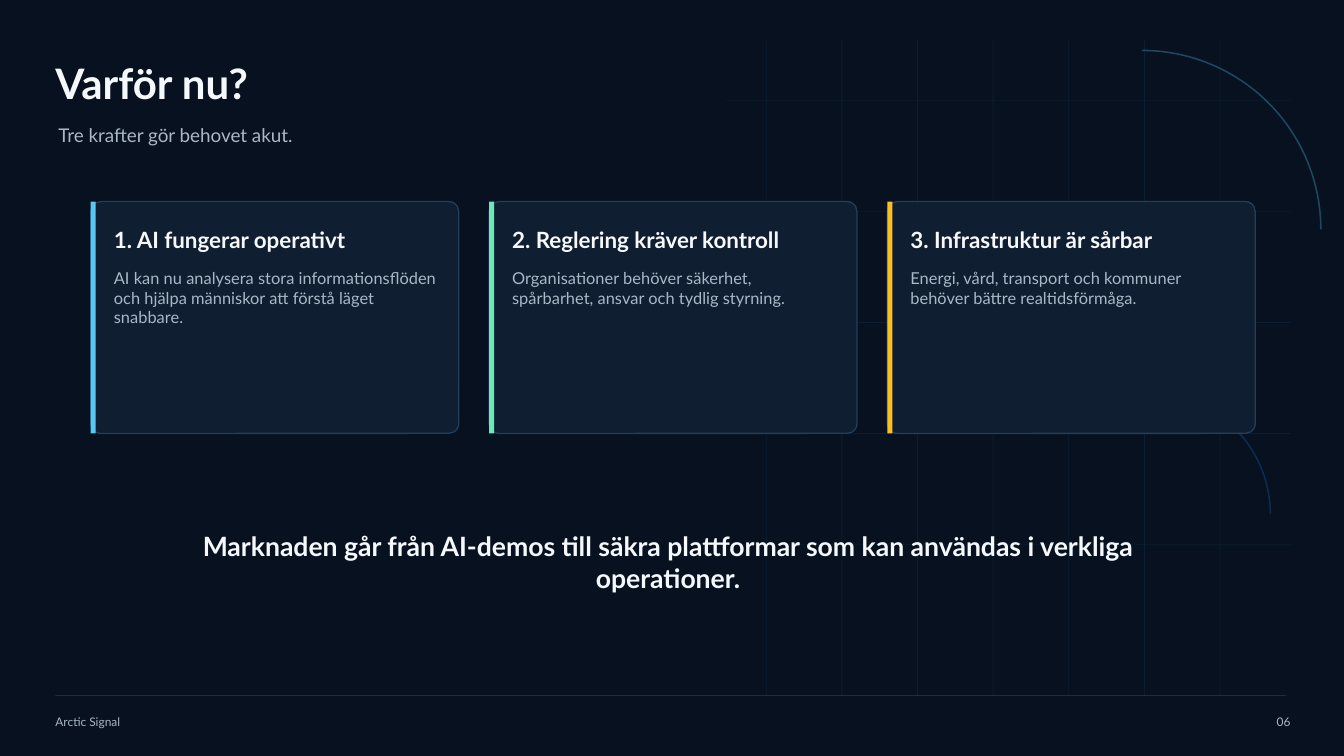
from lxml import etree
from pptx import Presentation
from pptx import util as u
from pptx.dml.color import RGBColor
from pptx.enum import shapes, text
from pptx.oxml.ns import qn

# Grid: one cell is a tenth of an inch, 133.3 columns by 75 rows
CELL = 0.1
COLUMNS, ROWS = 133.3, 75

BACKGROUND, PANEL = "07111F", "111F33"
WHITE, GREY = "F5F8FC", "AAB7C7"
GRID, BORDER = "12304A", "284866"
CYAN, BLUE, GREEN, AMBER = "58C7F3", "2B87FF", "6EE7B7", "FBBF24"

CARDS = [
    ("1. AI fungerar operativt", CYAN,
     "AI kan nu analysera stora informationsflöden och hjälpa människor "
     "att förstå läget snabbare."),
    ("2. Reglering kräver kontroll", GREEN,
     "Organisationer behöver säkerhet, spårbarhet, ansvar och tydlig styrning."),
    ("3. Infrastruktur är sårbar", AMBER,
     "Energi, vård, transport och kommuner behöver bättre realtidsförmåga."),
]


def cells(*counts):
    return [u.Inches(count * CELL) for count in counts]


def color(hex_value):
    return RGBColor.from_string(hex_value)


class SlideBuilder:
    font = "Lato"

    def __init__(self, presentation):
        self.slide = presentation.slides.add_slide(presentation.slide_layouts[6])
        fill = self.slide.background.fill
        fill.solid()
        fill.fore_color.rgb = color(BACKGROUND)

    def paint(self, fill, hex_value, opacity=100):
        fill.solid()
        fill.fore_color.rgb = color(hex_value)
        if opacity < 100:
            srgb = fill._xPr.find(".//" + qn("a:srgbClr"))
            etree.SubElement(srgb, qn("a:alpha"), val=str(opacity * 1000))

    def stroke(self, line, hex_value, points, opacity):
        line.width = u.Pt(points)
        self.paint(line.fill, hex_value, opacity)

    def line(self, x1, y1, x2, y2, hex_value, points, opacity):
        connector = self.slide.shapes.add_connector(
            shapes.MSO_CONNECTOR.STRAIGHT, *cells(x1, y1, x2, y2))
        self.stroke(connector.line, hex_value, points, opacity)
        etree.SubElement(connector._element.spPr, qn("a:effectLst"))

    def shape(self, kind, box, fill=None, opacity=100, outline=None):
        shape = self.slide.shapes.add_shape(kind, *cells(*box))
        shape.shadow.inherit = False
        if fill:
            self.paint(shape.fill, fill, opacity)
        else:
            shape.fill.background()
        if outline:
            self.stroke(shape.line, *outline)
        else:
            shape.line.fill.background()
        return shape

    def text(self, words, box, size, hex_value=GREY, bold=False,
             align=text.PP_ALIGN.LEFT, anchor=text.MSO_ANCHOR.MIDDLE):
        frame = self.slide.shapes.add_textbox(*cells(*box)).text_frame
        frame.word_wrap = True
        frame.vertical_anchor = anchor
        frame.margin_left = frame.margin_right = 0
        frame.margin_top = frame.margin_bottom = 0
        paragraph = frame.paragraphs[0]
        paragraph.text = words
        paragraph.alignment = align
        font = paragraph.font
        font.name, font.size, font.bold = self.font, u.Pt(size), bold
        font.color.rgb = color(hex_value)

    def card(self, left, top, heading, accent, body):
        width, height, inset = 36.5, 23, 2.3
        panel = self.shape(shapes.MSO_SHAPE.ROUNDED_RECTANGLE,
                           (left, top, width, height), PANEL, 95, (BORDER, 0.9, 82))
        panel.adjustments[0] = 0.043
        self.shape(shapes.MSO_SHAPE.RECTANGLE, (left, top, 0.5, height), accent)
        self.text(heading, (left + inset, top + 2.2, 32, 3.2), 16, WHITE, bold=True)
        self.text(body, (left + inset, top + 6.6, 32, 14.8), 11.7,
                  anchor=text.MSO_ANCHOR.TOP)


def main():
    presentation = Presentation()
    presentation.slide_width, presentation.slide_height = cells(COLUMNS, ROWS)
    builder = SlideBuilder(presentation)

    # Background grid and arcs
    for i in range(7):
        x = 76 + 7.5 * i
        builder.line(x, 4, x, 69, GRID, 0.6, 45)
    for i in range(5):
        y = 10 + 11 * i
        builder.line(72, y, 128, y, GRID, 0.6, 40)
    builder.shape(shapes.MSO_SHAPE.ARC, (95.5, 5, 35.5, 35.5), outline=(CYAN, 1.1, 30))
    builder.shape(shapes.MSO_SHAPE.ARC, (102, 39, 24, 24), outline=(BLUE, 1.1, 22))

    # Title and subtitle
    builder.text("Varför nu?", (5.5, 5.5, 82, 5.5), 30, WHITE, bold=True)
    builder.text("Tre krafter gör behovet akut.", (5.8, 11.6, 84, 3.5), 13.5)

    # Cards
    for i, (heading, accent, body) in enumerate(CARDS):
        builder.card(9 + 39.5 * i, 20, heading, accent, body)

    # Conclusion
    builder.text("Marknaden går från AI-demos till säkra plattformar som kan "
                 "användas i verkliga operationer.", (13.5, 53.5, 105.5, 4.5), 19,
                 WHITE, bold=True, align=text.PP_ALIGN.CENTER)

    # Footer
    builder.text("Arctic Signal", (5.5, 70.5, 23, 2.2), 8.5)
    builder.line(5.5, 69, 127.5, 69, BORDER, 0.5, 55)
    builder.text("06", (122, 70.5, 6, 2.2), 8.5, align=text.PP_ALIGN.RIGHT)

    presentation.save("out.pptx")


if __name__ == "__main__":
    main()
